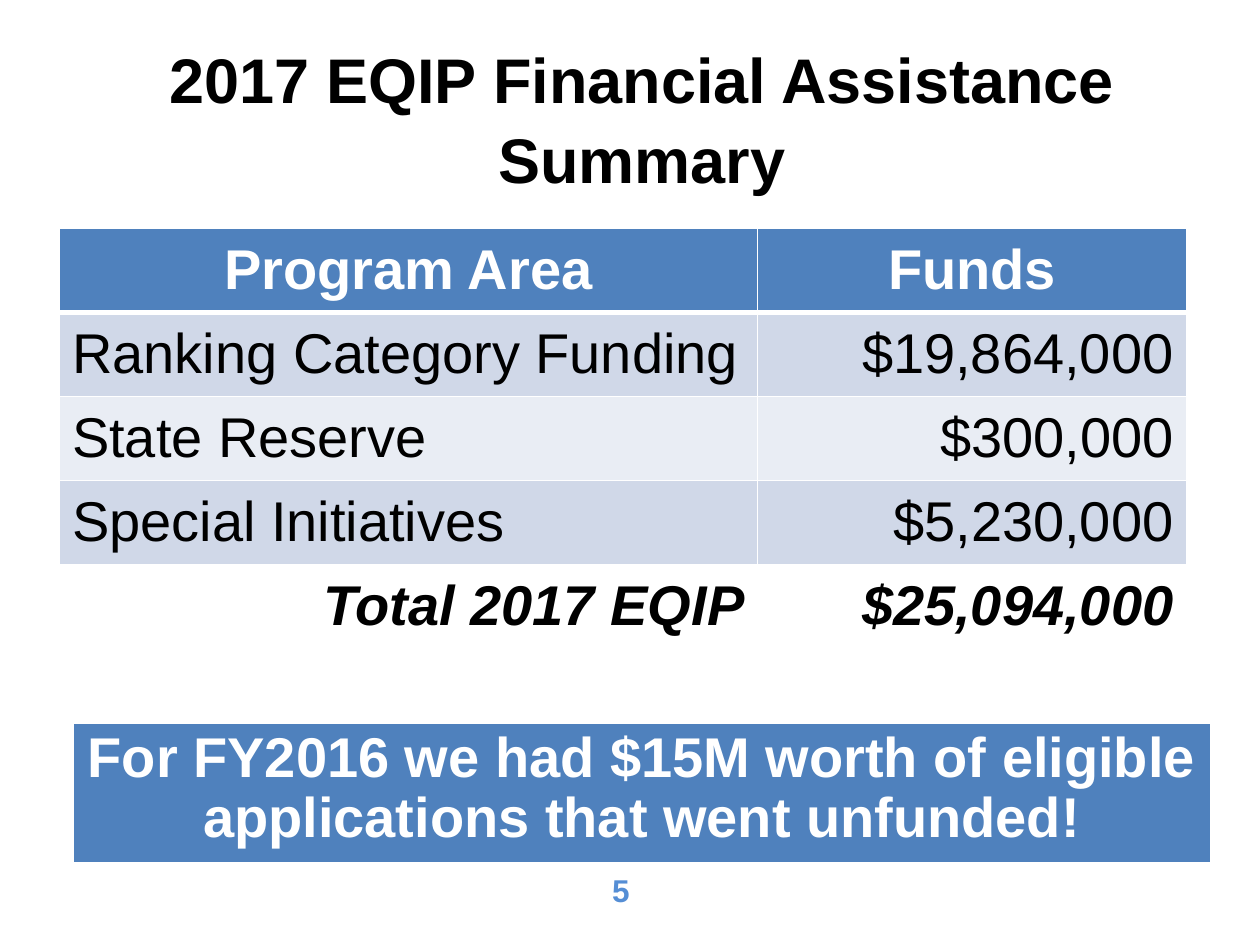
from lxml import etree
from pptx import Presentation
from pptx.dml.color import RGBColor
from pptx.enum.text import MSO_ANCHOR, MSO_AUTO_SIZE, PP_ALIGN
from pptx.oxml.ns import qn
from pptx.util import Pt

LEFT, CENTER, RIGHT = PP_ALIGN.LEFT, PP_ALIGN.CENTER, PP_ALIGN.RIGHT
TOP, MIDDLE = MSO_ANCHOR.TOP, MSO_ANCHOR.MIDDLE
NO_AUTOFIT = MSO_AUTO_SIZE.NONE
TITLE_ONLY = 5

COLORS = {
    "black": "000000",
    "white": "FFFFFF",
    "header": "4F81BD",
    "band_dark": "D0D8E8",
    "band_light": "E9EDF4",
    "page_number": "558ED5",
}
BORDER_WIDTHS = {"lnL": 1, "lnR": 1, "lnT": 1, "lnB": 1}
HEADER_BORDER_WIDTHS = {**BORDER_WIDTHS, "lnB": 3}
BOLD = {"bold": True, "italic": False}
PLAIN = {"bold": False, "italic": False}
BOLD_ITALIC = {"bold": True, "italic": True}

FUND_ROWS = [
    (("Program Area", "Funds"), (CENTER, CENTER), "white", "header", BOLD),
    (("Ranking Category Funding", "$19,864,000"), (LEFT, RIGHT), "black", "band_dark", PLAIN),
    (("State Reserve", "$300,000"), (LEFT, RIGHT), "black", "band_light", PLAIN),
    (("Special Initiatives", "$5,230,000"), (LEFT, RIGHT), "black", "band_dark", PLAIN),
    (("Total 2017 EQIP", "$25,094,000"), (RIGHT, RIGHT), "black", "white", BOLD_ITALIC),
]


def write_text(text_frame, text, size, color, alignment, style, line_spacing=1.0):
    paragraph = text_frame.paragraphs[0]
    paragraph.alignment = alignment
    paragraph.line_spacing = line_spacing
    run = paragraph.add_run()
    run.text = text
    for name, value in {"name": "Arial", "size": Pt(size), **style}.items():
        setattr(run.font, name, value)
    run.font.color.rgb = RGBColor.from_string(COLORS[color])


def format_cell(cell, fill, anchor, border_widths):
    cell.vertical_anchor = anchor
    properties = cell._tc.get_or_add_tcPr()
    for side, width in border_widths.items():
        line = etree.SubElement(properties, qn(f"a:{side}"), w=str(Pt(width)))
        line_fill = etree.SubElement(line, qn("a:solidFill"))
        etree.SubElement(line_fill, qn("a:srgbClr"), val=COLORS["white"])
    cell.fill.solid()
    cell.fill.fore_color.rgb = RGBColor.from_string(COLORS[fill])


def add_title(slide, left, top, width, height):
    title = slide.shapes.title
    box = {"left": left, "top": top, "width": width, "height": height}
    for name, value in box.items():
        setattr(title, name, Pt(value))
    text_frame = title.text_frame
    frame_format = {"word_wrap": True, "auto_size": NO_AUTOFIT, "vertical_anchor": MIDDLE}
    for name, value in frame_format.items():
        setattr(text_frame, name, value)
    write_text(text_frame, "2017 EQIP Financial Assistance Summary",
               36, "black", CENTER, BOLD, 1.05)


def add_funds_table(slide, left, top, width, height):
    table = slide.shapes.add_table(
        len(FUND_ROWS), 2, Pt(left), Pt(top), Pt(width), Pt(height)).table
    area_width = round(width * 0.62)
    for column, column_width in zip(table.columns, (area_width, width - area_width)):
        column.width = Pt(column_width)
    for row_index, (texts, alignments, color, fill, style) in enumerate(FUND_ROWS):
        border_widths = BORDER_WIDTHS if row_index else HEADER_BORDER_WIDTHS
        for column_index, (text, alignment) in enumerate(zip(texts, alignments)):
            cell = table.cell(row_index, column_index)
            format_cell(cell, fill, MIDDLE, border_widths)
            write_text(cell.text_frame, text, 32, color, alignment, style)


def add_unfunded_banner(slide, left, top, width, height):
    table = slide.shapes.add_table(
        1, 1, Pt(left), Pt(top), Pt(width), Pt(height)).table
    cell = table.cell(0, 0)
    format_cell(cell, "header", TOP, HEADER_BORDER_WIDTHS)
    write_text(cell.text_frame,
               "For FY2016 we had $15M worth of eligible applications that went unfunded!",
               32, "white", CENTER, BOLD, 0.96)


def add_page_number(slide, left, top, width, height):
    text_box = slide.shapes.add_textbox(Pt(left), Pt(top), Pt(width), Pt(height))
    text_box.text_frame.word_wrap = True
    write_text(text_box.text_frame, "5", 18, "page_number", CENTER, BOLD)


def main():
    presentation = Presentation()
    presentation.slide_width = Pt(720)
    presentation.slide_height = Pt(540)
    slide = presentation.slides.add_slide(presentation.slide_layouts[TITLE_ONLY])
    add_page_number(slide, 310.5, 494, 88.5, 29)
    add_title(slide, 49.5, 21.5, 634.5, 90)
    add_funds_table(slide, 34, 130.5, 644, 240)
    add_unfunded_banner(slide, 42, 413, 650, 77)
    presentation.save("out.pptx")


if __name__ == "__main__":
    main()
